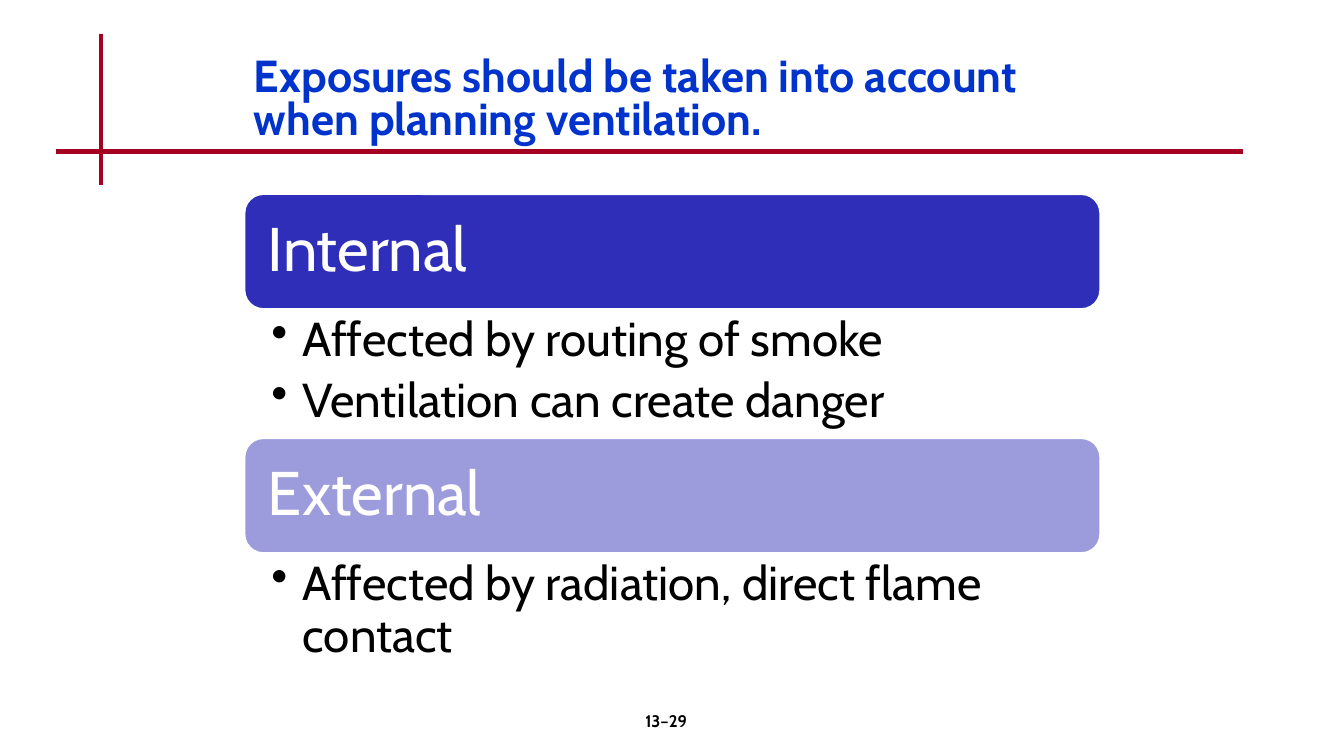
from dataclasses import dataclass

from lxml.etree import SubElement
from pptx import Presentation
from pptx.dml.color import RGBColor
from pptx.enum.shapes import MSO_CONNECTOR, MSO_SHAPE
from pptx.enum.text import MSO_ANCHOR, MSO_AUTO_SIZE, PP_ALIGN
from pptx.oxml.ns import qn
from pptx.slide import Slide
from pptx.text.text import TextFrame, _Paragraph
from pptx.util import Cm, Pt

FONT = "Cabin"
COLORS = {
    "title": "0033CC",
    "rule": "A50021",
    "text": "000000",
    "white": "FFFFFF",
    "internal": "2E2EB9",
    "external": "9C9CDD",
}
LIST_LEFT, LIST_TOP, LIST_WIDTH = 6.15, 4.88, 21.59
HEADING_HEIGHT = 2.92


@dataclass
class Rule:
    start: tuple[float, float]
    end: tuple[float, float]


@dataclass
class Exposure:
    heading: str
    color: str
    effects: list[str]
    effects_height: float


RULES = [
    Rule((2.54, 0.85), (2.54, 4.66)),
    Rule((1.42, 3.82), (31.33, 3.82)),
]
EXPOSURES = [
    Exposure("Internal", "internal",
             ["Affected by routing of smoke", "Ventilation can create danger"], 3.23),
    Exposure("External", "external",
             ["Affected by radiation, direct flame contact"], 2.97),
]


def rgb(name: str) -> RGBColor:
    return RGBColor.from_string(COLORS[name])


def format_runs(paragraph: _Paragraph, size: float, color: str, bold: bool = False) -> None:
    for run in paragraph.runs:
        run.font.name = FONT
        run.font.size = Pt(size)
        run.font.bold = bold
        run.font.color.rgb = rgb(color)


def set_frame(frame: TextFrame, anchor: MSO_ANCHOR, left: float = 0.25, top: float = 0.13,
              right: float = 0.25, bottom: float = 0.13) -> None:
    frame.word_wrap = True
    frame.auto_size = MSO_AUTO_SIZE.NONE
    frame.vertical_anchor = anchor
    frame.margin_left, frame.margin_top = Cm(left), Cm(top)
    frame.margin_right, frame.margin_bottom = Cm(right), Cm(bottom)


def add_bullet(paragraph: _Paragraph, indent: float) -> None:
    properties = paragraph._p.get_or_add_pPr()
    properties.set("marL", str(Cm(indent)))
    properties.set("indent", str(-Cm(indent)))
    SubElement(properties, qn("a:buChar")).set("char", "•")


def draw_rule(slide: Slide, rule: Rule) -> None:
    line = slide.shapes.add_connector(
        MSO_CONNECTOR.STRAIGHT, *map(Cm, rule.start), *map(Cm, rule.end))
    line.line.color.rgb = rgb("rule")
    line.line.width = Pt(3)
    SubElement(line._element.spPr, qn("a:effectLst"))


def draw_title(slide: Slide, text: str) -> None:
    title = slide.shapes.title
    title.left, title.top, title.width, title.height = Cm(6.15), Cm(1.27), Cm(22.63), Cm(2.54)
    set_frame(title.text_frame, MSO_ANCHOR.MIDDLE)
    title.text_frame.text = text
    paragraph = title.text_frame.paragraphs[0]
    paragraph.alignment = PP_ALIGN.LEFT
    paragraph.line_spacing = 0.8
    format_runs(paragraph, 32, "title", bold=True)


def draw_page_number(slide: Slide, text: str) -> None:
    page_number = slide.shapes.add_textbox(Cm(13.26), Cm(17.78), Cm(7.06), Cm(1.27))
    set_frame(page_number.text_frame, MSO_ANCHOR.TOP)
    page_number.text_frame.text = text
    paragraph = page_number.text_frame.paragraphs[0]
    paragraph.alignment = PP_ALIGN.CENTER
    format_runs(paragraph, 12, "text", bold=True)


def draw_heading(slide: Slide, exposure: Exposure, top: float) -> None:
    heading = slide.shapes.add_shape(
        MSO_SHAPE.ROUNDED_RECTANGLE, Cm(LIST_LEFT), Cm(top), Cm(LIST_WIDTH), Cm(HEADING_HEIGHT))
    heading.shadow.inherit = False
    heading.fill.solid()
    heading.fill.fore_color.rgb = rgb(exposure.color)
    heading.line.color.rgb = rgb("white")
    heading.line.width = Pt(2)
    set_frame(heading.text_frame, MSO_ANCHOR.MIDDLE, 0.46, 0.46, 0.46, 0.46)
    heading.text_frame.text = exposure.heading
    paragraph = heading.text_frame.paragraphs[0]
    paragraph.alignment = PP_ALIGN.LEFT
    paragraph.line_spacing = 0.9
    format_runs(paragraph, 44, "white")


def draw_effects(slide: Slide, exposure: Exposure, top: float) -> None:
    effects = slide.shapes.add_textbox(
        Cm(LIST_LEFT), Cm(top), Cm(LIST_WIDTH), Cm(exposure.effects_height))
    set_frame(effects.text_frame, MSO_ANCHOR.TOP, left=0.69, top=0.15, right=0.86, bottom=0.15)
    effects.text_frame.text = "\n".join(exposure.effects)
    for paragraph in effects.text_frame.paragraphs:
        add_bullet(paragraph, 0.79)
        paragraph.line_spacing = 0.9
        paragraph.space_after = Pt(7)
        format_runs(paragraph, 34, "text")


def main() -> None:
    presentation = Presentation()
    presentation.slide_width, presentation.slide_height = Cm(33.87), Cm(19.05)
    slide = presentation.slides.add_slide(presentation.slide_layouts[5])

    # Crossed rules, title and page number
    for rule in RULES:
        draw_rule(slide, rule)
    draw_title(slide, "Exposures should be taken into account when planning ventilation.")
    draw_page_number(slide, "13–29")

    # Headings stacked with their effects
    top = LIST_TOP
    for exposure in EXPOSURES:
        draw_heading(slide, exposure, top)
        draw_effects(slide, exposure, top + HEADING_HEIGHT)
        top += HEADING_HEIGHT + exposure.effects_height

    presentation.save("out.pptx")


if __name__ == "__main__":
    main()
